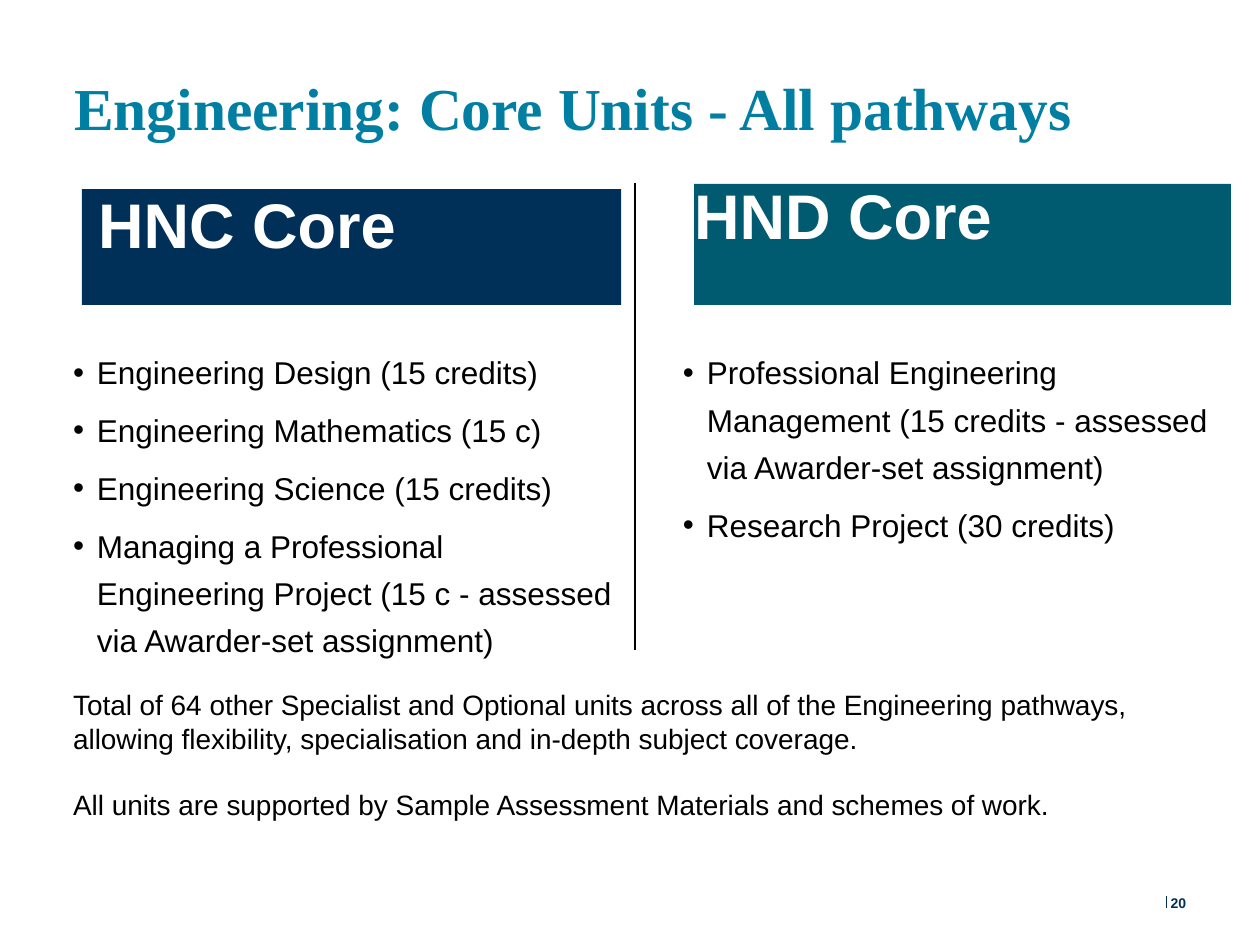
import pptx
import pptx.util
import pptx.dml.color
import pptx.enum.shapes
import pptx.enum.text
import pptx.oxml.ns
import lxml.etree

Inches = pptx.util.Inches
Pt = pptx.util.Pt
RGBColor = pptx.dml.color.RGBColor
Anchor = pptx.enum.text.MSO_ANCHOR
qn = pptx.oxml.ns.qn

NAVY = RGBColor(0x00, 0x30, 0x57)
TEAL = RGBColor(0x00, 0x5A, 0x70)
BLUE = RGBColor(0x00, 0x7F, 0xA3)
BLACK = RGBColor(0, 0, 0)
WHITE = RGBColor(255, 255, 255)

HNC_UNITS = [
    "Engineering Design (15 credits)",
    "Engineering Mathematics (15 c)",
    "Engineering Science (15 credits)",
    "Managing a Professional Engineering Project (15 c - assessed via Awarder-set assignment)",
]
HND_UNITS = [
    "Professional Engineering Management (15 credits - assessed via Awarder-set assignment)",
    "Research Project (30 credits)",
]
SUMMARY = [
    "Total of 64 other Specialist and Optional units across all of the Engineering pathways, "
    "allowing flexibility, specialisation and in-depth subject coverage.",
    "All units are supported by Sample Assessment Materials and schemes of work.",
]


def add_bullet(p):
    pPr = p._p.get_or_add_pPr()
    pPr.set("marL", str(Inches(0.19)))
    pPr.set("indent", str(-Inches(0.19)))
    color = lxml.etree.SubElement(pPr, qn("a:buClr"))
    lxml.etree.SubElement(color, qn("a:srgbClr")).set("val", str(BLACK))
    lxml.etree.SubElement(pPr, qn("a:buFont")).set("typeface", "Arial")
    lxml.etree.SubElement(pPr, qn("a:buChar")).set("char", "•")


def add_text(s, text, x, y, w, h, size=18, font="Arial", color=BLACK, bold=False,
             spacing=None, gap=0, bullet=False, anchor=Anchor.TOP):
    sp = s.shapes.add_textbox(Inches(x), Inches(y), Inches(w), Inches(h))
    tf = sp.text_frame
    tf.word_wrap = True
    tf.vertical_anchor = anchor
    tf.margin_left = tf.margin_right = tf.margin_top = tf.margin_bottom = 0
    lines = [text] if isinstance(text, str) else text
    for i, line in enumerate(lines):
        p = tf.add_paragraph() if i else tf.paragraphs[0]
        if bullet:
            add_bullet(p)
        if spacing:
            p.line_spacing = spacing
        if i and gap:
            p.space_before = Pt(gap)
        r = p.add_run()
        r.text = line
        r.font.name = font
        r.font.size = Pt(size)
        r.font.bold = bold
        r.font.color.rgb = color


def add_rule(s, x, top, bottom, color):
    line = s.shapes.add_connector(pptx.enum.shapes.MSO_CONNECTOR.STRAIGHT,
                                  Inches(x), Inches(top), Inches(x), Inches(bottom))
    line.line.color.rgb = color
    line.line.width = Pt(0.75)
    lxml.etree.SubElement(line._element.spPr, qn("a:effectLst"))


def add_column(s, x, y, w, heading, units, fill, banner, label):
    dx, dy, bw, bh = banner
    sp = s.shapes.add_shape(pptx.enum.shapes.MSO_SHAPE.RECTANGLE,
                            Inches(x + dx), Inches(y + dy), Inches(bw), Inches(bh))
    sp.shadow.inherit = False
    sp.fill.solid()
    sp.fill.fore_color.rgb = fill
    sp.line.fill.background()
    dx, dy, lw, lh = label
    add_text(s, heading, x + dx, y + dy, lw, lh, size=36, color=WHITE, bold=True)
    add_text(s, units, x, y + 1.33, w, 2.36, spacing=1.25, gap=6, bullet=True)


def add_footer(s, x, y, w, h):
    add_rule(s, x, y + 0.01, y + 0.11, NAVY)
    add_text(s, "20", x + 0.03, y, w - 0.03, h, size=8, color=NAVY, bold=True,
             anchor=Anchor.MIDDLE)


def main():
    prs = pptx.Presentation()
    prs.slide_width, prs.slide_height = Inches(10), Inches(7.5)
    s = prs.slides.add_slide(prs.slide_layouts[6])
    add_text(s, "Engineering: Core Units - All pathways", 0.59, 0.46, 8.41, 1.22,
             size=34, font="Times New Roman", color=BLUE, bold=True, spacing=1.18)
    add_column(s, 0.58, 1.4, 4.3, "HNC Core", HNC_UNITS, NAVY,
               banner=(0.07, 0.1, 4.28, 0.92), label=(0.2, 0.07, 4.1, 0.95))
    add_rule(s, 5.04, 1.45, 5.16, BLACK)
    add_column(s, 5.42, 1.4, 4.35, "HND Core", HND_UNITS, TEAL,
               banner=(0.09, 0.06, 4.26, 0.96), label=(0.09, 0, 4.26, 1.02))
    add_text(s, SUMMARY, 0.58, 5.46, 9.19, 1.43, size=16, gap=18.4)
    add_footer(s, 9.26, 7.1, 0.5, 0.14)
    prs.save("out.pptx")


if __name__ == "__main__":
    main()
